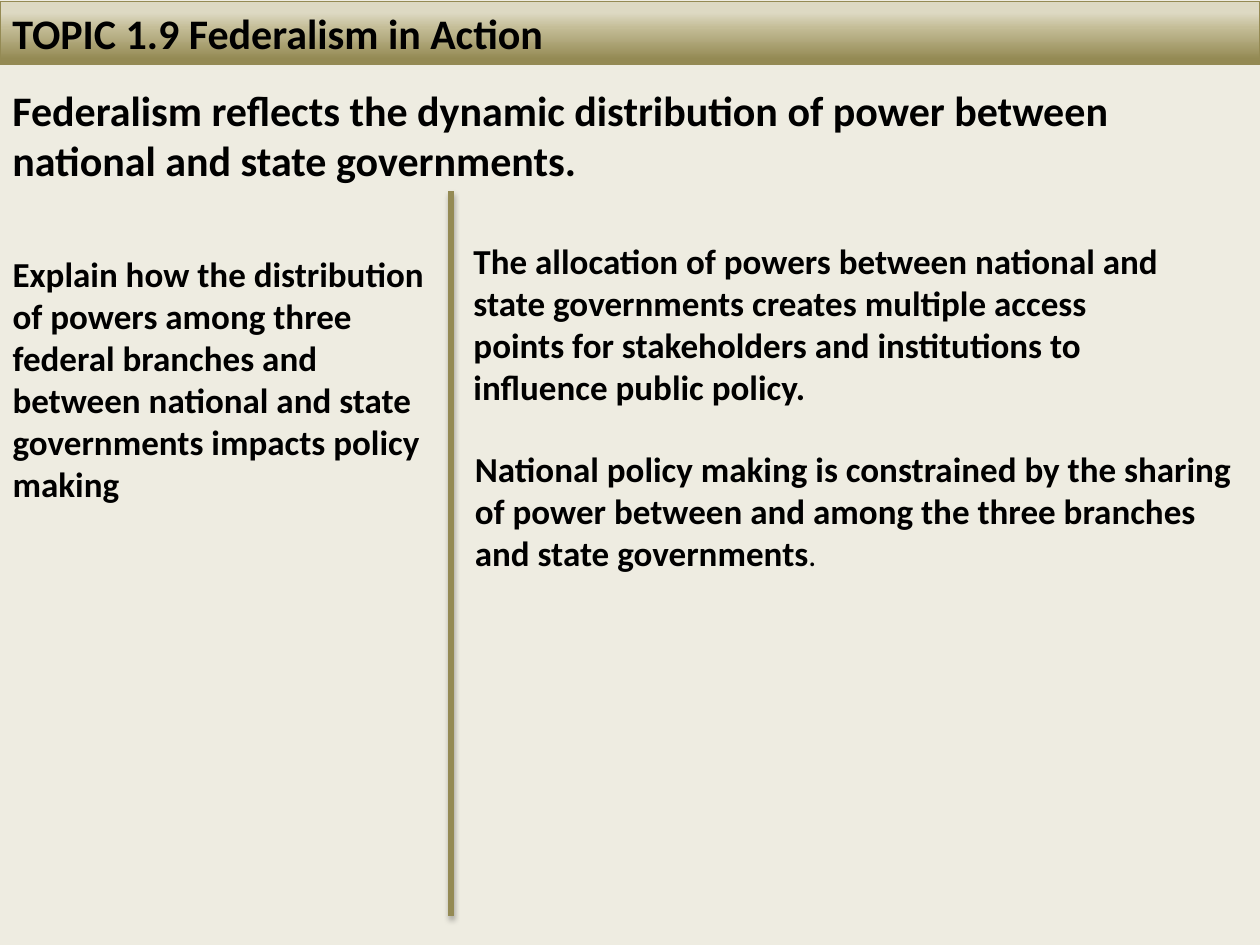
import pptx
import pptx.dml.color
import pptx.enum.dml
import pptx.enum.shapes
import pptx.enum.text
import pptx.oxml
import pptx.oxml.ns
import pptx.util

Pt = pptx.util.Pt
BACKGROUND, BLACK, OLIVE = "EEECE1", "000000", "948A54"
BAR_STOPS = [(18, "DDD9C3"), (42, "C4BD97"), (92, OLIVE)]
HEADING = {"size": Pt(24), "bold": True}
BODY = {"size": Pt(20), "bold": True}
PERIOD = {"size": Pt(18), "bold": False}
INSET = (7.2, 3.6)

BAR = {
    "area": (0, 0.72, 720, 36), "inset": INSET,
    "paragraphs": [[("TOPIC 1.9 Federalism in Action", HEADING)]],
}
TEXTS = [
    {"area": (0, 44.64, 715.68, 65.52), "inset": INSET,
     "paragraphs": [[("Federalism reflects the dynamic distribution of power between "
                      "national and state governments.", HEADING)]]},
    {"area": (7.2, 144, 239.76, 145.44), "inset": (0, 0),
     "paragraphs": [[("Explain how the distribution of powers among three federal branches "
                      "and between national and state governments impacts policy making",
                      BODY)]]},
    {"area": (263.52, 133.2, 458.64, 104.4), "inset": INSET,
     "paragraphs": [[(line, BODY)] for line in (
         "The allocation of powers between national and",
         "state governments creates multiple access",
         "points for stakeholders and institutions to",
         "influence public policy.")]},
    {"area": (264.24, 252, 450, 79.92), "inset": INSET,
     "paragraphs": [[("National policy making is constrained by the sharing of power between "
                      "and among the three branches and state governments", BODY),
                     (".", PERIOD)]]},
]
DIVIDER = (257.76, 109.44, 257.76, 523.44)


def color(value):
    return pptx.dml.color.RGBColor.from_string(value)


def xml(markup):
    """Parse an element after declaring the drawing namespace on its root."""
    head, rest = markup.split(">", 1)
    return pptx.oxml.parse_xml(f"{head} {pptx.oxml.ns.nsdecls('a')}>{rest}")


def write(shape, content):
    frame = shape.text_frame
    across, down = content["inset"]
    settings = {
        "word_wrap": True,
        "auto_size": pptx.enum.text.MSO_AUTO_SIZE.SHAPE_TO_FIT_TEXT,
        "margin_left": Pt(across), "margin_right": Pt(across),
        "margin_top": Pt(down), "margin_bottom": Pt(down),
    }
    for name, value in settings.items():
        setattr(frame, name, value)
    for index, spans in enumerate(content["paragraphs"]):
        para = frame.add_paragraph() if index else frame.paragraphs[0]
        para.alignment = pptx.enum.text.PP_ALIGN.LEFT
        for text, style in spans:
            span = para.add_run()
            span.text = text
            span.font.color.rgb = color(BLACK)
            for name, value in {"name": "Calibri", **style}.items():
                setattr(span.font, name, value)


def add_bar(page):
    bar = page.shapes.add_shape(
        pptx.enum.shapes.MSO_SHAPE.RECTANGLE, *map(Pt, BAR["area"]))
    bar.shadow.inherit = False
    bar.line.color.rgb = color(OLIVE)
    bar.line.width = Pt(0.75)
    bar.fill.gradient()
    bar.fill.gradient_angle = 270
    stops = "".join(f'<a:gs pos="{place * 1000}"><a:srgbClr val="{tone}"/></a:gs>'
                    for place, tone in BAR_STOPS)
    old = bar.element.spPr.find(".//" + pptx.oxml.ns.qn("a:gsLst"))
    old.getparent().replace(old, xml(f"<a:gsLst>{stops}</a:gsLst>"))
    write(bar, BAR)


def add_divider(page):
    divider = page.shapes.add_connector(
        pptx.enum.shapes.MSO_CONNECTOR.STRAIGHT, *map(Pt, DIVIDER))
    divider.line.color.rgb = color(OLIVE)
    divider.line.width = Pt(3)
    divider.element.spPr.append(xml(
        f'<a:effectLst><a:outerShdw blurRad="{Pt(3.1)}" dist="{Pt(1.8)}" dir="5400000" '
        f'rotWithShape="0"><a:srgbClr val="{BLACK}"><a:alpha val="35000"/></a:srgbClr>'
        '</a:outerShdw></a:effectLst>'))


def main():
    deck = pptx.Presentation()
    deck.slide_width, deck.slide_height = Pt(720), Pt(540)
    page = deck.slides.add_slide(deck.slide_layouts[6])
    page.background.fill.solid()
    page.background.fill.fore_color.rgb = color(BACKGROUND)
    add_bar(page)
    add_divider(page)
    for content in TEXTS:
        write(page.shapes.add_textbox(*map(Pt, content["area"])), content)
    deck.save("out.pptx")


if __name__ == "__main__":
    main()
